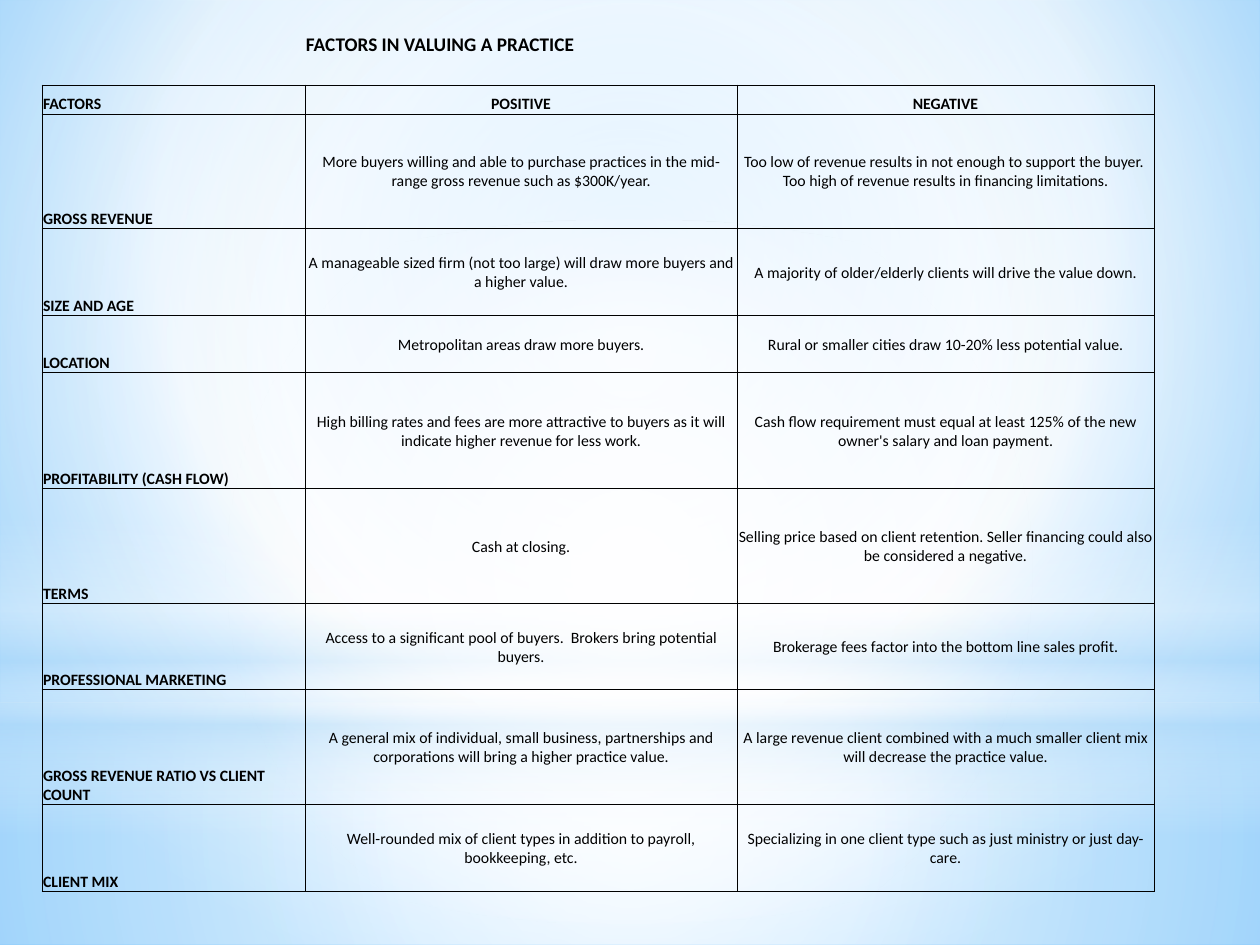
from lxml import etree
from pptx import Presentation
from pptx.dml.color import RGBColor
from pptx.enum import shapes, text
from pptx.oxml import ns
from pptx.util import Emu, Pt

BLACK = RGBColor(0, 0, 0)
WHITE = RGBColor(255, 255, 255)
SKY = RGBColor(0x9E, 0xD5, 0xFF)
AZURE = RGBColor(0x5B, 0xB9, 0xFF)
PALE = RGBColor(0xB4, 0xDC, 0xFA)

WIDE, HIGH = 1260, 945
MID = (50, 50, 50, 50)
PLAIN = "{2D5ABB26-0587-4C30-8999-92F81FD0307C}"  # no style, no grid

COLS = [263, 432, 417]
ROWS = [36, 28, 29, 115, 87, 57, 116, 115, 86, 115, 87]
TITLE = "FACTORS IN VALUING A PRACTICE"
HEAD = ("FACTORS", "POSITIVE", "NEGATIVE")
FACTORS = [
    ("GROSS REVENUE",
     "More buyers willing and able to purchase practices in the mid-range gross revenue such as $300K/year.",
     "Too low of revenue results in not enough to support the buyer.  "
     "Too high of revenue results in financing limitations."),
    ("SIZE AND AGE",
     "A manageable sized firm (not too large) will draw more buyers and a higher value.",
     "A majority of older/elderly clients will drive the value down."),
    ("LOCATION",
     "Metropolitan areas draw more buyers.",
     "Rural or smaller cities draw 10-20% less potential value."),
    ("PROFITABILITY (CASH FLOW)",
     "High billing rates and fees are more attractive to buyers as it will indicate higher revenue for less work.",
     "Cash flow requirement must equal at least 125% of the new owner's salary and loan payment."),
    ("TERMS",
     "Cash at closing.",
     "Selling price based on client retention. Seller financing could also be considered a negative."),
    ("PROFESSIONAL MARKETING",
     "Access to a significant pool of buyers.  Brokers bring potential buyers.",
     "Brokerage fees factor into the bottom line sales profit."),
    ("GROSS REVENUE RATIO VS CLIENT COUNT",
     "A general mix of individual, small business, partnerships and corporations "
     "will bring a higher practice value.",
     "A large revenue client combined with a much smaller client mix will decrease the practice value."),
    ("CLIENT MIX",
     "Well-rounded mix of client types in addition to payroll, bookkeeping, etc.",
     "Specializing in one client type such as just ministry or just day-care."),
]


def px(n):
    return Emu(round(n * 914400 / 126))


def sub(node, tag, **attrs):
    return etree.SubElement(node, ns.qn(tag), {k: str(v) for k, v in attrs.items()})


class Deck:
    font, size, rule = "Calibri", 9, 0.5

    def __init__(self):
        self.prs = Presentation()
        self.prs.slide_width, self.prs.slide_height = px(WIDE), px(HIGH)
        self.slide = self.prs.slides.add_slide(self.prs.slide_layouts[6])

    def blend(self, solid, stops, to=None):
        """Swap a solid fill for a gradient: round about `to`, else top to bottom."""
        grad = etree.Element(ns.qn("a:gradFill"), rotWithShape="1")
        marks = sub(grad, "a:gsLst")
        for pos, color, alpha in stops:
            mark = sub(marks, "a:gs", pos=pos * 1000)
            tint = sub(mark, "a:srgbClr", val=color)
            if alpha < 100:
                sub(tint, "a:alpha", val=alpha * 1000)
        if to:
            way = sub(grad, "a:path", path="circle")
            sub(way, "a:fillToRect", **{k: v * 1000 for k, v in zip("ltrb", to)})
        else:
            sub(grad, "a:lin", ang=5400000, scaled=0)
        solid.getparent().replace(solid, grad)

    def back(self, stops, to):
        self.slide.background.fill.solid()
        self.blend(self.slide.element.find(".//" + ns.qn("a:solidFill")), stops, to)

    def glow(self, kind, top, high, stops, to=None):
        """Add a full-width borderless shape with a gradient."""
        shape = self.slide.shapes.add_shape(kind, 0, px(top), px(WIDE), px(high))
        shape.shadow.inherit = False
        shape.line.fill.background()
        shape.fill.solid()
        self.blend(shape.element.spPr.find(ns.qn("a:solidFill")), stops, to)

    def table(self, x, y, cols, rows):
        frame = self.slide.shapes.add_table(
            len(rows), len(cols), px(x), px(y), px(sum(cols)), px(sum(rows)))
        grid = frame.table
        grid.first_row = grid.horz_banding = False
        frame.element.find(".//" + ns.qn("a:tableStyleId")).text = PLAIN
        for col, wide in zip(grid.columns, cols):
            col.width = px(wide)
        for row, high in zip(grid.rows, rows):
            row.height = px(high)
        for cell in grid.iter_cells():
            cell.fill.background()
            cell.margin_left = cell.margin_right = cell.margin_top = px(1)
            cell.margin_bottom = 0
            end = cell.text_frame.paragraphs[0]._p.get_or_add_endParaRPr()
            end.set("sz", str(self.size * 100))
        return grid

    def label(self, cell, words, bold=True, mid=False, center=False, size=None):
        cell.text = words
        cell.vertical_anchor = text.MSO_ANCHOR.MIDDLE if mid else text.MSO_ANCHOR.BOTTOM
        para = cell.text_frame.paragraphs[0]
        para.alignment = text.PP_ALIGN.CENTER if center else text.PP_ALIGN.LEFT
        font = para.font
        font.name, font.size, font.bold = self.font, Pt(size or self.size), bold
        font.color.rgb = BLACK

    def edge(self, cell, sides):
        props = cell._tc.get_or_add_tcPr()
        for spot, side in enumerate(sides):
            line = etree.Element(ns.qn("a:ln" + side), w=str(Pt(self.rule)))
            sub(sub(line, "a:solidFill"), "a:srgbClr", val=BLACK)
            props.insert(spot, line)


def main():
    deck = Deck()
    rect, oval = shapes.MSO_SHAPE.RECTANGLE, shapes.MSO_SHAPE.OVAL
    deck.back([(0, SKY, 100), (60, WHITE, 100), (100, AZURE, 100)], (20, 10, 20, 60))
    deck.glow(rect, 703, 242, [(0, WHITE, 91), (37, WHITE, 76), (100, PALE, 79)], MID)
    deck.glow(rect, 0, 703, [(0, WHITE, 89), (48, WHITE, 62), (100, PALE, 79)], MID)
    deck.glow(rect, 519, 315, [(0, WHITE, 0), (29, WHITE, 30), (45, PALE, 40),
                               (55, WHITE, 26), (65, PALE, 60), (100, WHITE, 0)])
    deck.glow(oval, 220, 703, [(0, WHITE, 100), (56, WHITE, 0)], MID)

    grid = deck.table(42, 21, COLS, ROWS)
    grid.cell(0, 1).merge(grid.cell(0, 2))
    deck.label(grid.cell(0, 1), TITLE, size=11)
    for c in range(len(COLS)):
        deck.edge(grid.cell(1, c), "B")
    for r, row in enumerate([HEAD] + FACTORS, 2):
        for c, words in enumerate(row):
            body = r > 2 and c > 0
            deck.label(grid.cell(r, c), words, bold=not body, mid=body, center=c > 0)
            deck.edge(grid.cell(r, c), "LRTB")
    deck.prs.save("out.pptx")


if __name__ == "__main__":
    main()
